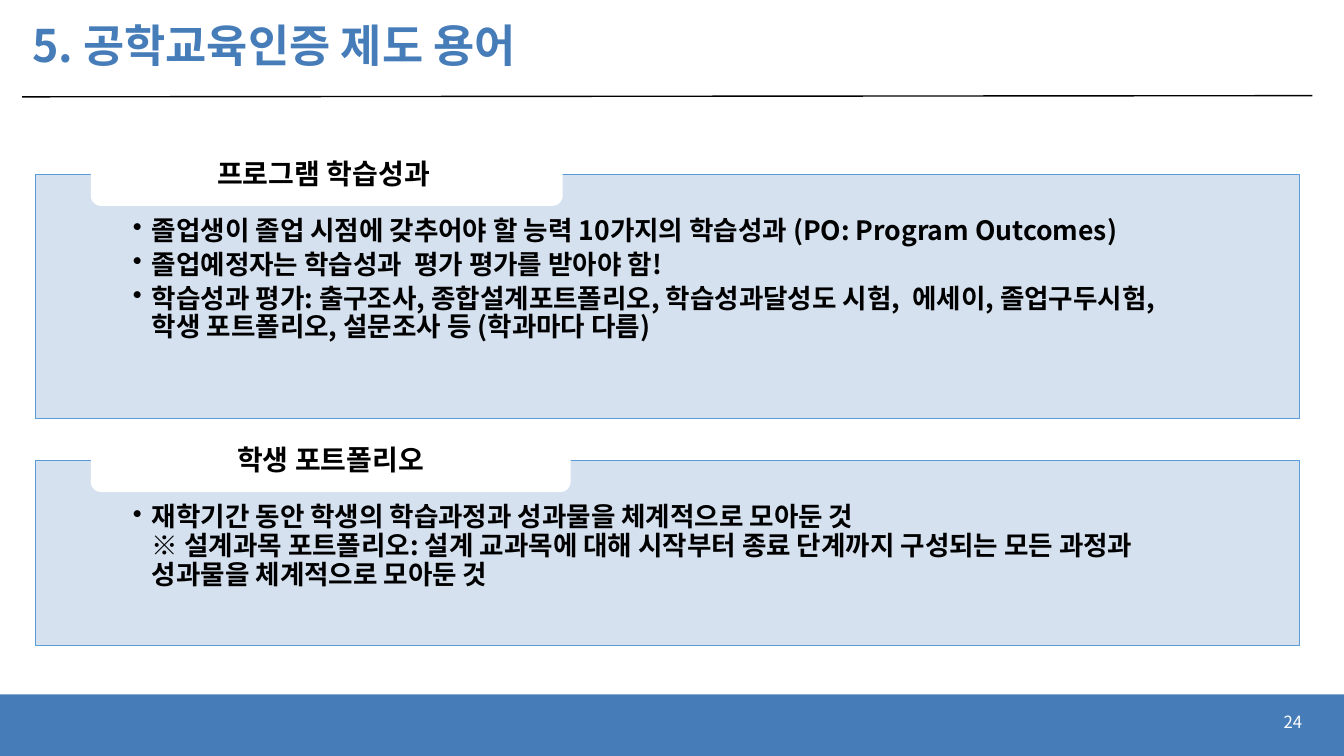
from dataclasses import dataclass

from lxml.etree import SubElement
from pptx import Presentation
from pptx.dml.color import RGBColor
from pptx.enum.shapes import MSO_CONNECTOR as Connector, MSO_SHAPE as Shape
from pptx.enum.text import MSO_ANCHOR as Anchor, PP_ALIGN as Align
from pptx.oxml.ns import qn
from pptx.util import Cm, Pt


@dataclass(frozen=True)
class Theme:
    font: str = "Noto Sans CJK KR"
    blue: str = "467DB9"
    panel: str = "D2DEEF"
    border: str = "5B9BD5"
    black: str = "000000"
    white: str = "FFFFFF"
    title_size: int = 32
    heading_size: int = 20
    body_size: int = 19
    number_size: int = 12


THEME = Theme()
SLIDE_WIDTH, SLIDE_HEIGHT = 33.87, 19.05
PANEL_LEFT, PANEL_WIDTH = 0.89, 31.85
TAB_LEFT, TAB_HEIGHT, TAB_RISE = 2.29, 1.55, 0.76

# heading, panel top, panel height, tab width, bullet points
SECTIONS = [
    ("프로그램 학습성과 ", 4.4, 6.15, 11.89, [
        "졸업생이 졸업 시점에 갖추어야 할 능력 10가지의 학습성과 (PO: Program Outcomes)",
        "졸업예정자는 학습성과  평가 평가를 받아야 함!",
        "학습성과 평가: 출구조사, 종합설계포트폴리오, 학습성과달성도 시험,  에세이, "
        "졸업구두시험, 학생 포트폴리오, 설문조사 등 (학과마다 다름)",
    ]),
    ("학생 포트폴리오", 11.61, 4.65, 12.09, [
        "재학기간 동안 학생의 학습과정과 성과물을 체계적으로 모아둔 것\n"
        "※ 설계과목 포트폴리오: 설계 교과목에 대해 시작부터 종료 단계까지 "
        "구성되는 모든 과정과 성과물을 체계적으로 모아둔 것",
    ]),
]


def set_format(target, values):
    for name, value in values.items():
        setattr(target, name, value)


def add_block(slide, kind, box, fill, line=None):
    shape = slide.shapes.add_shape(kind, *map(Cm, box))
    shape.shadow.inherit = False
    shape.fill.solid()
    shape.fill.fore_color.rgb = RGBColor.from_string(fill)
    if line:
        shape.line.color.rgb = RGBColor.from_string(line)
        shape.line.width = Pt(0.5)
    else:
        shape.line.fill.background()
    return shape


def write_text(shape, texts, size, color, bold=True, frame_format=None, paragraph_format=None):
    frame = shape.text_frame
    set_format(frame, {"word_wrap": True, **(frame_format or {})})
    for index, text in enumerate(texts):
        paragraph = frame.paragraphs[0] if index == 0 else frame.add_paragraph()
        paragraph.text = text
        set_format(paragraph, {"line_spacing": 0.9, **(paragraph_format or {})})
        for run in paragraph.runs:
            set_format(run.font, {"name": THEME.font, "size": Pt(size), "bold": bold})
            run.font.color.rgb = RGBColor.from_string(color)
            SubElement(run.font._element, qn("a:ea"), typeface=THEME.font)


def add_bullets(shape):
    for paragraph in shape.text_frame.paragraphs:
        properties = paragraph._p.get_or_add_pPr()
        indent = Cm(0.48)
        properties.set("marL", str(indent))
        properties.set("indent", str(-indent))
        SubElement(properties, qn("a:buChar"), char="•")


def set_opacity(shape, percent):
    color = shape._element.spPr.find(qn("a:solidFill"))[0]
    SubElement(color, qn("a:alpha"), val=str(percent * 1000))


def add_rule(slide):
    line = slide.shapes.add_connector(Connector.STRAIGHT, Cm(0.56), Cm(2.44), Cm(33.07), Cm(2.41))
    line.line.color.rgb = RGBColor.from_string(THEME.black)
    line.line.width = Pt(1)
    SubElement(line._element.spPr, qn("a:effectLst"))


def add_label(slide, box, text, size, color, bold, align):
    label = slide.shapes.add_textbox(*map(Cm, box))
    write_text(label, [text], size, color, bold,
               {"vertical_anchor": Anchor.MIDDLE}, {"alignment": align})


def add_section(slide, heading, top, height, tab_width, points):
    """Add a panel of bullet points with its heading tab over the top edge."""
    panel = add_block(slide, Shape.RECTANGLE, (PANEL_LEFT, top, PANEL_WIDTH, height),
                      THEME.panel, THEME.border)
    set_opacity(panel, 90)
    write_text(panel, points, THEME.body_size, THEME.black,
               frame_format={"vertical_anchor": Anchor.TOP, "margin_left": Cm(2.46),
                             "margin_right": Cm(2.46), "margin_top": Cm(1.09),
                             "margin_bottom": Cm(0.38)},
               paragraph_format={"alignment": Align.LEFT, "space_after": Pt(3.5)})
    add_bullets(panel)
    tab = add_block(slide, Shape.ROUNDED_RECTANGLE,
                    (TAB_LEFT, top - TAB_RISE, tab_width, TAB_HEIGHT), THEME.white)
    write_text(tab, [heading], THEME.heading_size, THEME.black,
               frame_format={"vertical_anchor": Anchor.MIDDLE, "margin_left": Cm(0.84),
                             "margin_right": Cm(0.84), "margin_top": 0, "margin_bottom": 0},
               paragraph_format={"alignment": Align.CENTER})


def main():
    presentation = Presentation()
    set_format(presentation, {"slide_width": Cm(SLIDE_WIDTH), "slide_height": Cm(SLIDE_HEIGHT)})
    slide = presentation.slides.add_slide(presentation.slide_layouts[6])
    add_block(slide, Shape.RECTANGLE, (0, 17.5, SLIDE_WIDTH, 1.55), THEME.blue)
    add_rule(slide)
    add_label(slide, (0.56, 0.25, 32.54, 1.9), "5. 공학교육인증 제도 용어",
              THEME.title_size, THEME.blue, True, Align.LEFT)
    add_label(slide, (25.45, 17.7, 7.62, 1.02), "24",
              THEME.number_size, THEME.white, False, Align.RIGHT)
    for section in SECTIONS:
        add_section(slide, *section)
    presentation.save("out.pptx")


if __name__ == "__main__":
    main()
